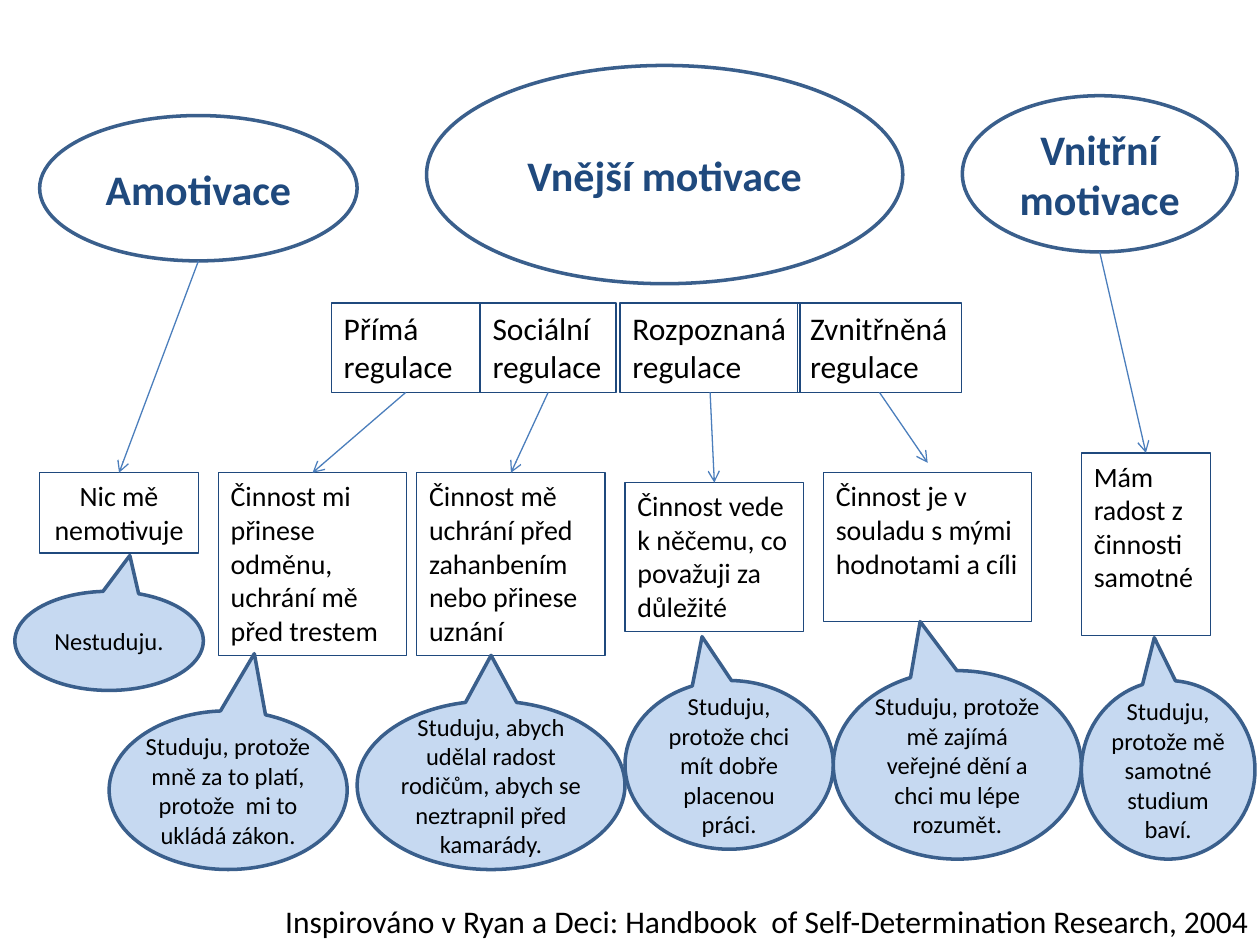
from lxml import etree
from pptx import Presentation
from pptx.dml.color import RGBColor
from pptx.enum.shapes import MSO_CONNECTOR, MSO_SHAPE as SHAPE
from pptx.enum.text import MSO_ANCHOR as ANCHOR, PP_ALIGN as ALIGN
from pptx.oxml.ns import qn
from pptx.util import Cm, Pt

NAVY = RGBColor(0x1F, 0x49, 0x7D)
OUTLINE = RGBColor(0x3A, 0x5F, 0x8C)
ARROW = RGBColor(0x4B, 0x7E, 0xBC)
PALE = RGBColor(0xC6, 0xD9, 0xF1)
BLACK = RGBColor(0, 0, 0)

# Text and box (left, top, width, height) in cm
MOTIVATIONS = [
    ("Amotivace", (0.8, 2.33, 6.4, 2.93)),
    ("Vnější motivace", (8.6, 1.32, 9.6, 4.4)),
    ("Vnitřní motivace", (19.4, 1.93, 5.54, 3.15)),
]
# Text, left and width in cm
REGULATIONS = [
    ("Přímá\nregulace", 6.68, 3),
    ("Sociální\nregulace", 9.68, 2.74),
    ("Rozpoznaná\nregulace", 12.5, 3.63),
    ("Zvnitřněná\nregulace", 16.08, 3.3),
]
REASONS = [
    ("Nic mě nemotivuje", (0.8, 9.53, 3.2, 1.62), ALIGN.CENTER),
    ("Činnost mi přinese odměnu, uchrání mě před trestem",
     (4.4, 9.53, 3.8, 3.68), ALIGN.LEFT),
    ("Činnost mě uchrání před zahanbením nebo přinese uznání",
     (8.4, 9.53, 3.8, 3.68), ALIGN.LEFT),
    ("Činnost vede k něčemu, co považuji za důležité",
     (12.6, 9.73, 3.6, 3), ALIGN.LEFT),
    ("Činnost je v souladu s mými hodnotami a cíli",
     (16.6, 9.53, 4.2, 3), ALIGN.LEFT),
    ("Mám radost z činnosti\nsamotné", (21.8, 9.13, 2.6, 3.68), ALIGN.LEFT),
]
# Text, box and position of the pointer tip
QUOTES = [
    ("Nestuduju.", (0.3, 11.92, 3.8, 2), (0.11, -0.86)),
    ("Studuju, protože mně za to platí, protože  mi to ukládá zákon.",
     (2.2, 14.33, 4.8, 3.2), (0.11, -0.86)),
    ("Studuju, abych udělal radost rodičům, abych se neztrapnil před "
     "kamarády.", (7.2, 14.13, 5.4, 3.4), (0, -0.77)),
    ("Studuju, protože chci mít dobře placenou práci.",
     (12.6, 13.72, 4.2, 3.4), (-0.13, -0.76)),
    ("Studuju, protože mě zajímá veřejné dění a chci mu lépe rozumět.",
     (16.8, 13.52, 5, 3.8), (-0.15, -0.76)),
    ("Studuju, protože mě samotné studium baví.",
     (21.8, 13.72, 3.5, 3.6), (-0.08, -0.74)),
]


def write(sp, text, size, color=BLACK, align=ALIGN.LEFT, anchor=ANCHOR.TOP,
          bold=False, wrap=True):
    """Fill a shape with text, one paragraph per line."""
    tf = sp.text_frame
    tf.text = text
    tf.word_wrap = wrap
    tf.vertical_anchor = anchor
    for p in tf.paragraphs:
        p.alignment = align
        p.font.name = "Calibri"
        p.font.size = Pt(size)
        p.font.bold = bold
        p.font.color.rgb = color


def add_outlined(slide, kind, box, line, weight, fill=None):
    """Add an outlined shape, filled if a colour is given."""
    sp = slide.shapes.add_shape(kind, *map(Cm, box))
    sp.shadow.inherit = False
    sp.line.color.rgb = line
    sp.line.width = Pt(weight)
    if fill is None:
        sp.fill.background()
    else:
        sp.fill.solid()
        sp.fill.fore_color.rgb = fill
    return sp


def add_motivation(slide, text, box):
    """Add an ellipse naming a type of motivation."""
    sp = add_outlined(slide, SHAPE.OVAL, box, OUTLINE, 2)
    write(sp, text, 24, NAVY, ALIGN.CENTER, ANCHOR.MIDDLE, bold=True)
    return sp


def add_box(slide, text, box, size, align=ALIGN.LEFT, wrap=True):
    """Add a thin-lined rectangle with text."""
    sp = add_outlined(slide, SHAPE.RECTANGLE, box, NAVY, 0.75)
    write(sp, text, size, align=align, wrap=wrap)
    return sp


def add_quote(slide, text, box, tip):
    """Add a speech bubble whose pointer ends at tip."""
    sp = add_outlined(slide, SHAPE.OVAL_CALLOUT, box, OUTLINE, 2, PALE)
    sp.adjustments[0], sp.adjustments[1] = tip
    tf = sp.text_frame
    tf.margin_left = tf.margin_right = tf.margin_top = tf.margin_bottom = 0
    write(sp, text, 14, align=ALIGN.CENTER, anchor=ANCHOR.MIDDLE)


def add_arrow(slide, upper, lower, gap=0):
    """Draw an arrow from the bottom of one shape to the top of another."""
    line = slide.shapes.add_connector(
        MSO_CONNECTOR.STRAIGHT,
        upper.left + upper.width // 2, upper.top + upper.height,
        lower.left + lower.width // 2, lower.top - Cm(gap))
    line.line.color.rgb = ARROW
    line.line.width = Pt(0.75)
    ln = line.line._get_or_add_ln()
    etree.SubElement(ln, qn("a:tailEnd"), type="arrow")
    etree.SubElement(ln.getparent(), qn("a:effectLst"))


def add_source(slide):
    """Add the source line at the foot of the slide."""
    sp = slide.shapes.add_textbox(Cm(5.5), Cm(18.05), Cm(19.9), Cm(1))
    sp.text_frame.margin_right = 0
    write(sp, "Inspirováno v Ryan a Deci: Handbook  of Self-Determination "
          "Research, 2004", 18, wrap=False)


def main():
    """Build the slide on types of motivation."""
    prs = Presentation()
    prs.slide_width, prs.slide_height = Cm(25.4), Cm(19.05)
    slide = prs.slides.add_slide(prs.slide_layouts[6])

    amotivation, _, inner = [add_motivation(slide, *m) for m in MOTIVATIONS]
    regulations = [add_box(slide, text, (left, 6.11, width, 1.8), 18, wrap=False)
                   for text, left, width in REGULATIONS]
    reasons = [add_box(slide, text, box, 16, align)
               for text, box, align in REASONS]
    gaps = [0, 0, 0, 0, 0.2, 0]
    for upper, lower, gap in zip([amotivation, *regulations, inner], reasons, gaps):
        add_arrow(slide, upper, lower, gap)
    for quote in QUOTES:
        add_quote(slide, *quote)
    add_source(slide)
    prs.save("out.pptx")


main()
